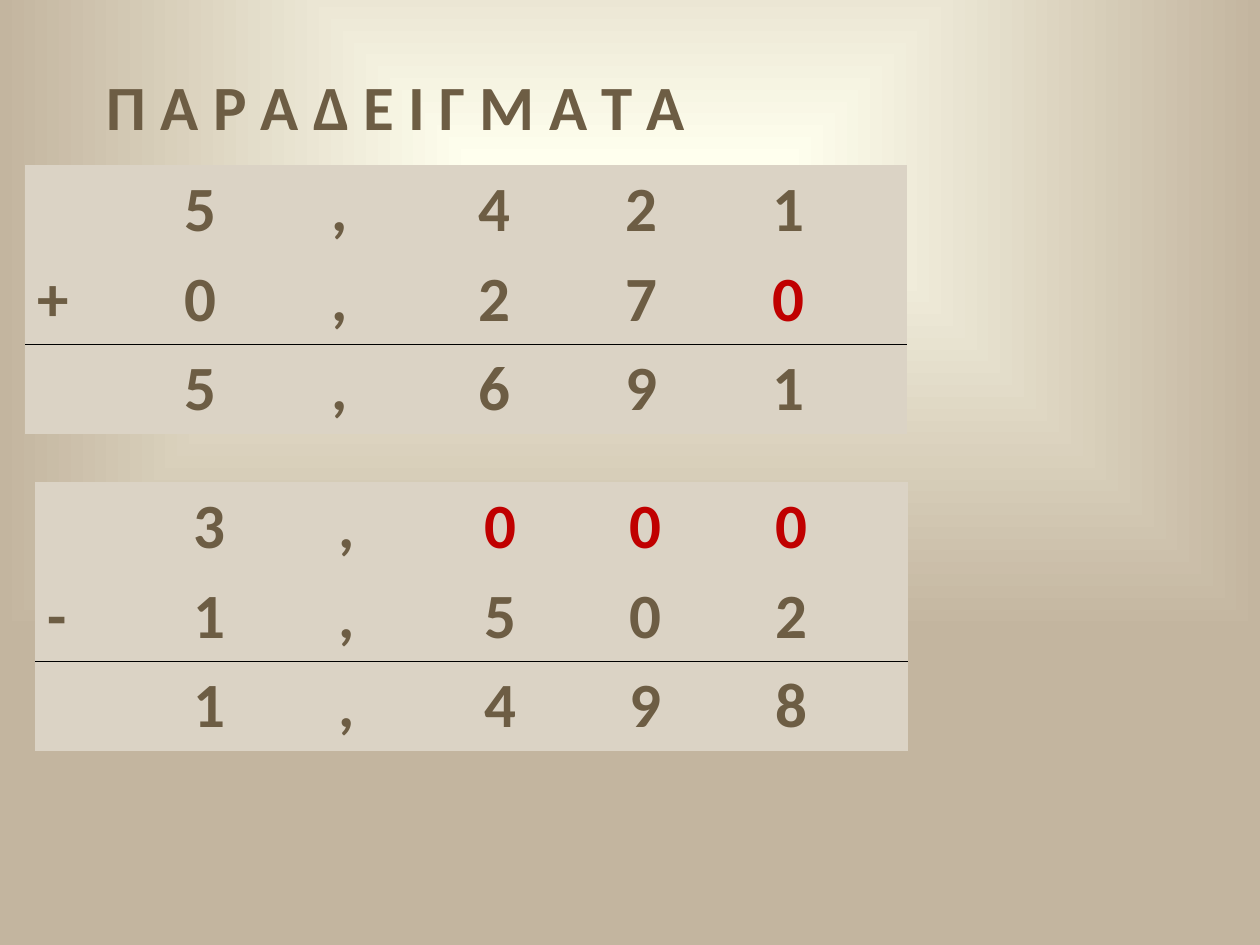
"""Builds a slide with worked examples of decimal addition and subtraction."""
from dataclasses import dataclass

from lxml import etree
from pptx import Presentation
from pptx import util as u
from pptx.dml.color import RGBColor
from pptx.enum import text
from pptx.oxml import ns

BROWN, RED, PANEL, BLACK = "6D5D44", "C00000", "DBD3C5", "000000"
GLOW, SAND = "FFFFEE", "C3B59F"
NO_STYLE = "{2D5ABB26-0587-4C30-8999-92F81FD0307C}"
ROW_HEIGHT = 51.2


@dataclass(frozen=True)
class Sum:
    left: float
    top: float
    width: float
    rows: tuple[str, ...]
    added_zeros: frozenset[tuple[int, int]]


SUMS = (
    Sum(14.3, 94.4, 504, (" 5,421", "+0,270", " 5,691"), frozenset({(1, 5)})),
    Sum(20.2, 275.6, 499, (" 3,000", "-1,502", " 1,498"),
        frozenset({(0, 3), (0, 4), (0, 5)})),
)


def rgb(color: str) -> RGBColor:
    return RGBColor.from_string(color)


def write(frame, words: str, *, color: str = BROWN, size: float = 36,
          bold: bool = True, font: str = "Calibri") -> None:
    paragraph = frame.paragraphs[0]
    paragraph.alignment = text.PP_ALIGN.LEFT
    run = paragraph.add_run()
    run.text = words
    run.font.name, run.font.size, run.font.bold = font, u.Pt(size), bold
    run.font.color.rgb = rgb(color)


def paint_background(slide) -> None:
    fill = slide.background.fill
    fill.gradient()
    for stop, color in zip(fill.gradient_stops, (GLOW, SAND)):
        stop.color.rgb = rgb(color)
    gradient = slide._element.find(".//" + ns.qn("a:gradFill"))
    gradient.remove(gradient.find(ns.qn("a:lin")))
    glow = etree.SubElement(gradient, ns.qn("a:path"), path="shape")
    etree.SubElement(glow, ns.qn("a:fillToRect"),
                     l="8000", t="9000", r="8000", b="74000")


def draw_border(cell, side: str, color: str = BLACK, width: float = 1) -> None:
    line = etree.Element(ns.qn(f"a:{side}"), w=str(u.Pt(width)))
    fill = etree.SubElement(line, ns.qn("a:solidFill"))
    etree.SubElement(fill, ns.qn("a:srgbClr"), val=color)
    cell._tc.get_or_add_tcPr().insert(0, line)


def draw_sum(slide, example: Sum) -> None:
    row_count, column_count = len(example.rows), len(example.rows[0])
    table = slide.shapes.add_table(
        row_count, column_count, u.Pt(example.left), u.Pt(example.top),
        u.Pt(example.width), u.Pt(ROW_HEIGHT * row_count)).table
    table.first_row = table.horz_banding = False
    table._tbl.tblPr.find(ns.qn("a:tableStyleId")).text = NO_STYLE
    for r, digits in enumerate(example.rows):
        for c, digit in enumerate(digits):
            cell = table.cell(r, c)
            cell.fill.solid()
            cell.fill.fore_color.rgb = rgb(PANEL)
            if digit != " ":
                color = RED if (r, c) in example.added_zeros else BROWN
                write(cell.text_frame, digit, color=color)
            if r == row_count - 2:
                draw_border(cell, "lnB")
            elif r == row_count - 1:
                draw_border(cell, "lnT")


def draw_title(slide, words: str) -> None:
    title = slide.shapes.add_textbox(u.Pt(54), u.Pt(15), u.Pt(612), u.Pt(90))
    frame = title.text_frame
    frame.word_wrap = True
    frame.vertical_anchor = text.MSO_ANCHOR.MIDDLE
    write(frame, words)


def main() -> None:
    deck = Presentation()
    deck.slide_width, deck.slide_height = u.Pt(720), u.Pt(540)
    slide = deck.slides.add_slide(deck.slide_layouts[6])
    paint_background(slide)
    draw_title(slide, "Π Α Ρ Α Δ Ε Ι Γ Μ Α Τ Α")
    for example in SUMS:
        draw_sum(slide, example)
    deck.save("out.pptx")


if __name__ == "__main__":
    main()
